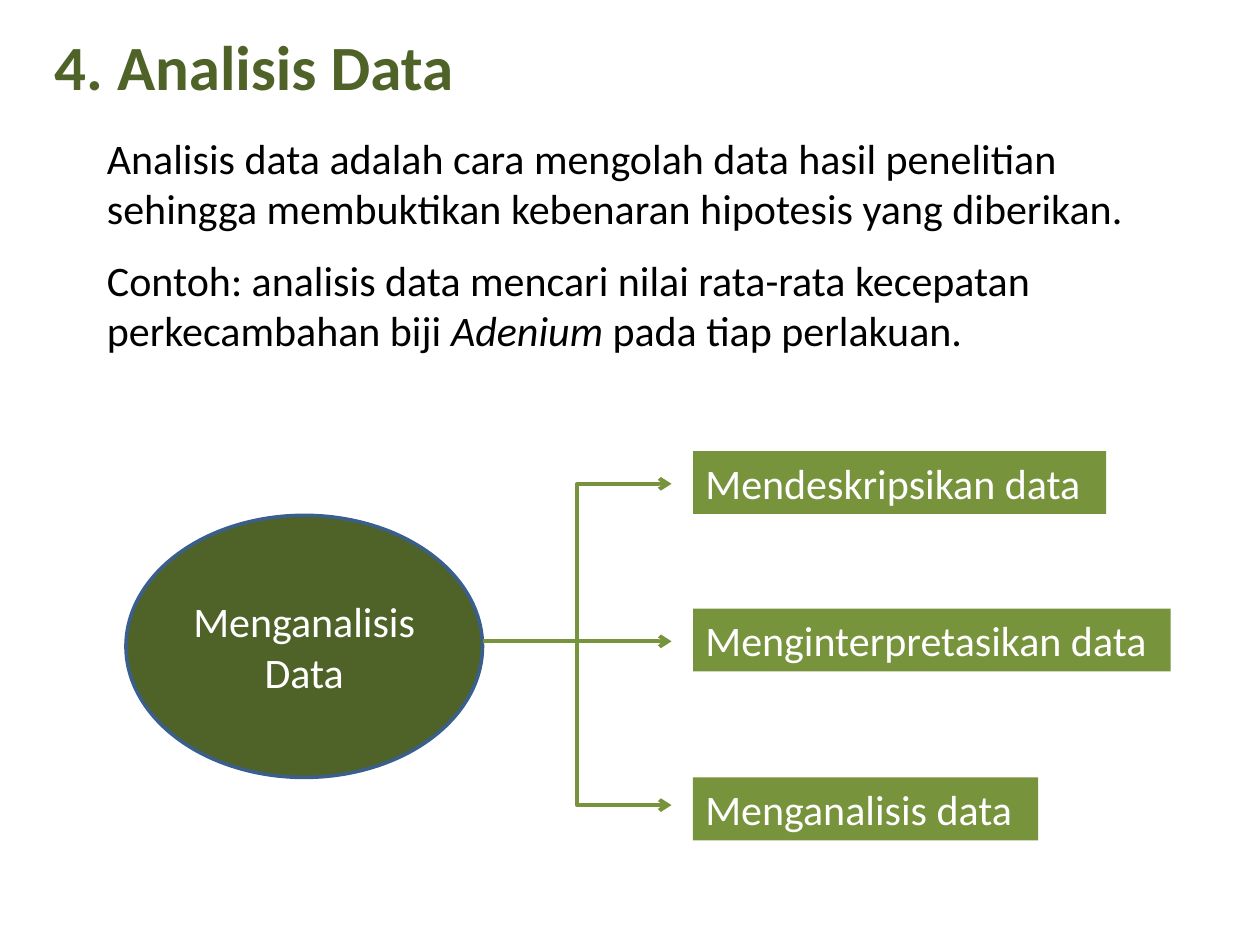
import pptx
import pptx.util
import pptx.dml.color
import pptx.enum.shapes
import pptx.enum.text
import pptx.oxml
import pptx.oxml.ns
from pptx.util import Inches, Pt

DARK, GREEN, BLUE, WHITE, BLACK = "4F6228", "77933C", "3A5F8C", "FFFFFF", "000000"
TITLE = "4. Analisis Data"
BODY = [
    [("Analisis data adalah cara mengolah data hasil penelitian "
      "sehingga membuktikan kebenaran hipotesis yang diberikan.", False)],
    [("Contoh: analisis data mencari nilai rata-rata kecepatan "
      "perkecambahan biji ", False), ("Adenium ", True), ("pada tiap perlakuan.", False)],
]
HUB = "Menganalisis Data"
STEPS = [
    ("Mendeskripsikan data", 3.58, 3.28, 3.84),
    ("Menginterpretasikan data", 4.83, 3.79, 5.09),
    ("Menganalisis data", 6.17, 2.74, 6.39),
]
HUB_BOX = (1, 4.09, 2.83, 2.08)
HUB_EXIT = (HUB_BOX[0] + HUB_BOX[2], 5.09)
STEP_LEFT, STEP_HEIGHT, ARROW_END = 5.5, 0.5, 5.33

SHAPE = pptx.enum.shapes.MSO_SHAPE
CONNECTOR = pptx.enum.shapes.MSO_CONNECTOR
ALIGN = pptx.enum.text.PP_ALIGN
ANCHOR = pptx.enum.text.MSO_ANCHOR


def rgb(value):
    return pptx.dml.color.RGBColor.from_string(value)


def place(sp, *box):
    sp.left, sp.top, sp.width, sp.height = map(Inches, box)


def style(tf, color, size=24, bold=False, align=ALIGN.LEFT, anchor=ANCHOR.TOP):
    tf.word_wrap = True
    tf.auto_size = pptx.enum.text.MSO_AUTO_SIZE.NONE
    tf.vertical_anchor = anchor
    for p in tf.paragraphs:
        p.alignment = align
        for r in p.runs:
            r.font.name, r.font.size, r.font.bold = "Calibri", Pt(size), bold
            r.font.color.rgb = rgb(color)


def add_box(s, kind, box, text, fill, line=None, **text_style):
    sp = s.shapes.add_shape(kind, *map(Inches, box))
    sp.shadow.inherit = False
    sp.fill.solid()
    sp.fill.fore_color.rgb = rgb(fill)
    if line:
        sp.line.color.rgb = rgb(line)
        sp.line.width = Pt(2)
    else:
        sp.line.fill.background()
    sp.text_frame.text = text
    style(sp.text_frame, WHITE, **text_style)


def add_arrow(s, start, end):
    kind = CONNECTOR.STRAIGHT if start[1] == end[1] else CONNECTOR.ELBOW
    sp = s.shapes.add_connector(kind, *map(Inches, start + end))
    sp.line.color.rgb = rgb(GREEN)
    sp.line.width = Pt(2.25)
    tail = pptx.oxml.parse_xml(f'<a:tailEnd {pptx.oxml.ns.nsdecls("a")} type="arrow"/>')
    sp.line._get_or_add_ln().append(tail)
    effects = pptx.oxml.parse_xml(f'<a:effectLst {pptx.oxml.ns.nsdecls("a")}/>')
    sp._element.spPr.append(effects)


def main():
    prs = pptx.Presentation()
    prs.slide_width, prs.slide_height = Inches(10), Inches(7.5)
    s = prs.slides.add_slide(prs.slide_layouts[5])

    title = s.shapes.title
    place(title, 0.33, 0.17, 3.41, 0.71)
    title.text_frame.text = TITLE
    style(title.text_frame, DARK, size=36, bold=True)

    tf = s.shapes.add_textbox(*map(Inches, (0.75, 1, 8.75, 1.88))).text_frame
    for i, parts in enumerate(BODY):
        p = tf.add_paragraph() if i else tf.paragraphs[0]
        if i:
            p.space_before = Pt(12)
        for text, italic in parts:
            r = p.add_run()
            r.text = text
            r.font.italic = italic
    style(tf, BLACK)

    add_box(s, SHAPE.OVAL, HUB_BOX, HUB, DARK, BLUE,
            align=ALIGN.CENTER, anchor=ANCHOR.MIDDLE)
    for text, top, width, arrow_y in STEPS:
        add_arrow(s, HUB_EXIT, (ARROW_END, arrow_y))
        add_box(s, SHAPE.RECTANGLE, (STEP_LEFT, top, width, STEP_HEIGHT), text, GREEN)

    prs.save("out.pptx")


if __name__ == "__main__":
    main()
